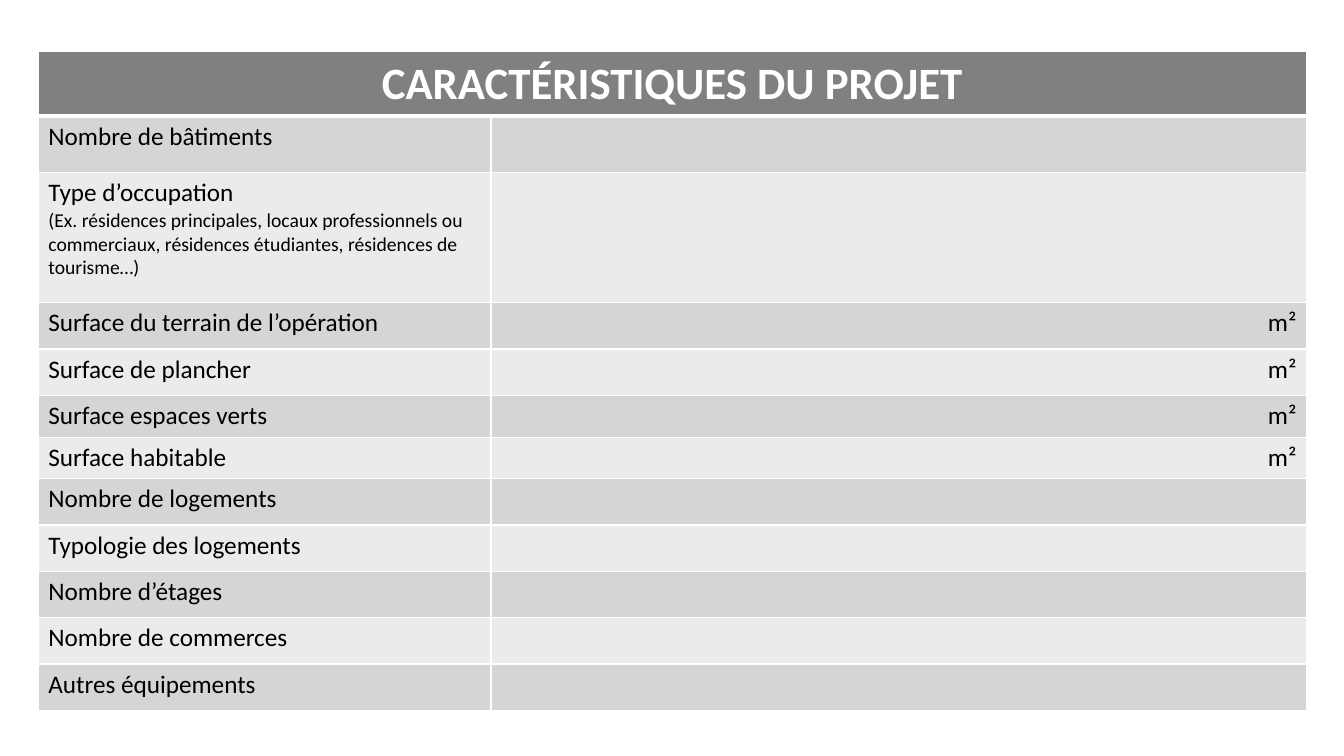
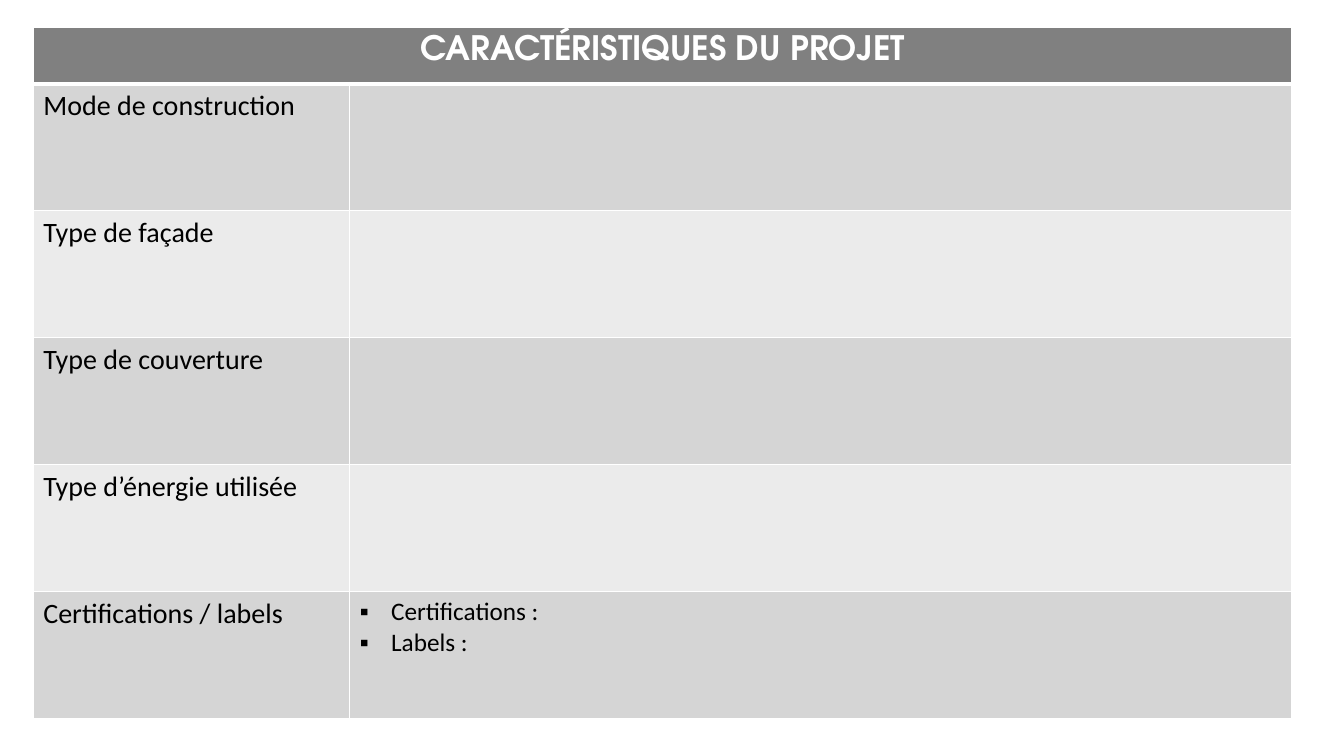
import pptx
import pptx.dml.color
import pptx.enum.text
import pptx.oxml.ns
import pptx.util
from dataclasses import dataclass
from lxml import etree

Inches = pptx.util.Inches
Align = pptx.enum.text.PP_ALIGN


@dataclass(frozen=True)
class Theme:
    header_fill: str = "808080"
    bands: tuple = ("D5D5D5", "EBEBEB")
    rule: str = "FFFFFF"
    header_text: str = "FFFFFF"
    body_text: str = "000000"
    body_font: str = "Calibri"
    header_font_alt: str = "TeX Gyre Adventor"
    note_size: int = 14
    text_size: int = 18
    label_size: int = 20
    rule_width: float = 1
    header_rule_width: float = 3
    bullet: str = "▪"
    bullet_indent: float = 0.31


THEME = Theme()
HEADING = "CARACTÉRISTIQUES DU PROJET"


# Text
def write_para(para, text, size, font=THEME.body_font, color=THEME.body_text,
               bold=False, align=Align.LEFT):
    para.alignment = align
    span = para.add_run()
    span.text = text
    span.font.name = font
    span.font.size = pptx.util.Pt(size)
    span.font.bold = bold
    span.font.color.rgb = pptx.dml.color.RGBColor.from_string(color)


def add_bullet(para):
    properties = para._p.get_or_add_pPr()
    indent = Inches(THEME.bullet_indent)
    properties.set("marL", str(indent))
    properties.set("indent", str(-indent))
    etree.SubElement(properties, pptx.oxml.ns.qn("a:buFont"), typeface=THEME.body_font)
    etree.SubElement(properties, pptx.oxml.ns.qn("a:buChar"), char=THEME.bullet)


def write_cell(cell, lines, align=Align.LEFT, bulleted=False):
    """Write (text, size) lines, one paragraph each."""
    frame = cell.text_frame
    for index, (text, size) in enumerate(lines):
        para = frame.add_paragraph() if index else frame.paragraphs[0]
        if bulleted:
            add_bullet(para)
        write_para(para, text, size, align=align)


# Cells and tables
def style_cell(cell, fill, bottom_width=THEME.rule_width, top_width=THEME.rule_width):
    cell.fill.solid()
    cell.fill.fore_color.rgb = pptx.dml.color.RGBColor.from_string(fill)
    properties = cell._tc.get_or_add_tcPr()
    widths = {"L": THEME.rule_width, "R": THEME.rule_width,
              "T": top_width, "B": bottom_width}
    for index, (side, width) in enumerate(widths.items()):
        line = etree.Element(pptx.oxml.ns.qn(f"a:ln{side}"), w=str(pptx.util.Pt(width)))
        solid = etree.SubElement(line, pptx.oxml.ns.qn("a:solidFill"))
        etree.SubElement(solid, pptx.oxml.ns.qn("a:srgbClr"), val=THEME.rule)
        properties.insert(index, line)


def add_form(page, left, top, columns, rows, header_font, header_size):
    """Add a two-column form with a merged header and banded rows."""
    table = page.shapes.add_table(
        len(rows), len(columns), Inches(left), Inches(top),
        Inches(sum(columns)), Inches(sum(rows))).table
    table.horz_banding = False
    for column, width in zip(table.columns, columns):
        column.width = Inches(width)
    for index, (row, height) in enumerate(zip(table.rows, rows)):
        row.height = Inches(height)
        for cell in row.cells:
            if index == 0:
                style_cell(cell, THEME.header_fill, bottom_width=THEME.header_rule_width)
            else:
                top_width = THEME.header_rule_width if index == 1 else THEME.rule_width
                style_cell(cell, THEME.bands[(index - 1) % 2], top_width=top_width)
    header = table.cell(0, 0)
    header.merge(table.cell(0, 1))
    write_para(header.text_frame.paragraphs[0], HEADING, header_size, header_font,
               THEME.header_text, bold=True, align=Align.CENTER)
    return table


# Slides
def build_areas(page):
    labels = ["Nombre de bâtiments", "Type d’occupation",
              "Surface du terrain de l’opération", "Surface de plancher",
              "Surface espaces verts", "Surface habitable", "Nombre de logements",
              "Typologie des logements", "Nombre d’étages", "Nombre de commerces",
              "Autres équipements"]
    notes = {"Type d’occupation":
             "(Ex. résidences principales, locaux professionnels ou commerciaux, "
             "résidences étudiantes, résidences de tourisme…)"}
    rows = [0.63, 0.56, 1.29, 0.46, 0.46, 0.42, 0.4] + [0.46] * 5
    table = add_form(page, 0.38, 0.51, [4.49, 8.09], rows, THEME.body_font, 32)
    for index, label in enumerate(labels, start=1):
        lines = [(label, THEME.text_size)]
        if label in notes:
            lines.append((notes[label], THEME.note_size))
        write_cell(table.cell(index, 0), lines)
        if label.startswith("Surface"):
            write_cell(table.cell(index, 1), [("m²", THEME.text_size)], Align.RIGHT)


def build_construction(page):
    labels = ["Mode de construction", "Type de façade", "Type de couverture",
              "Type d’énergie utilisée", "Certifications / labels"]
    rows = [0.56] + [1.26] * len(labels)
    table = add_form(page, 0.33, 0.27, [3.14, 9.34], rows, THEME.header_font_alt, 24)
    # Room for the accented capital
    table.cell(0, 0).margin_top = Inches(0.08)
    for index, label in enumerate(labels, start=1):
        write_cell(table.cell(index, 0), [(label, THEME.label_size)])
    write_cell(table.cell(len(labels), 1),
               [("Certifications :", THEME.text_size), ("Labels :", THEME.text_size)],
               bulleted=True)


def main():
    deck = pptx.Presentation()
    deck.slide_width, deck.slide_height = Inches(13.33), Inches(7.5)
    blank = deck.slide_layouts.get_by_name("Blank")
    for build in (build_areas, build_construction):
        build(deck.slides.add_slide(blank))
    deck.save("out.pptx")


if __name__ == "__main__":
    main()
